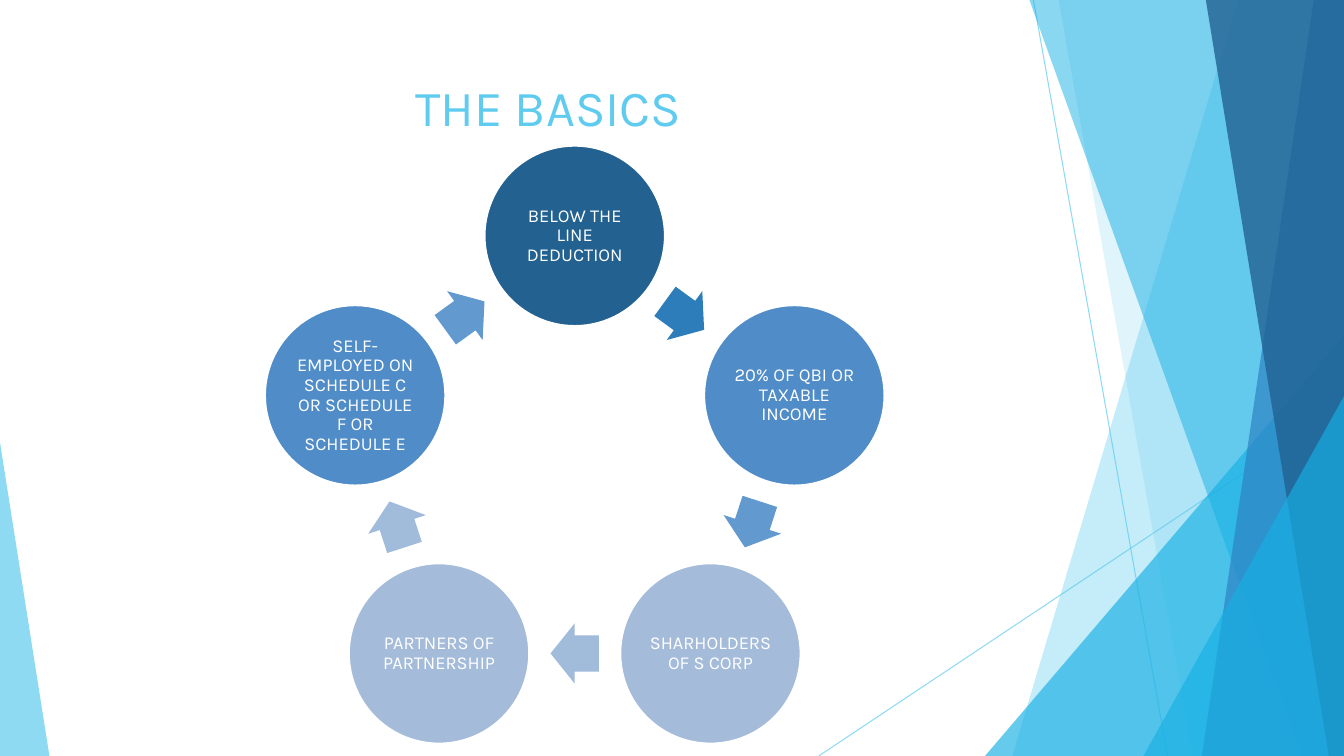
from dataclasses import dataclass
from math import cos, pi, radians, sin

from lxml.etree import SubElement
from pptx import Presentation
from pptx.dml.color import RGBColor
from pptx.enum.shapes import MSO_CONNECTOR, MSO_SHAPE
from pptx.enum.text import MSO_ANCHOR, MSO_AUTO_SIZE, PP_ALIGN
from pptx.oxml.ns import qn
from pptx.util import Inches, Pt

FONT = "Karla"
WIDTH, HEIGHT = 13.33, 7.5

WHITE = RGBColor(0xFF, 0xFF, 0xFF)
SKY = RGBColor(0x5F, 0xCB, 0xEF)
CYAN = RGBColor(0x17, 0xB0, 0xE4)
BLUE = RGBColor(0x2E, 0x83, 0xC3)
NAVY = RGBColor(0x22, 0x62, 0x92)

RING_X, RING_Y, RING_RADIUS = 5.7, 4.63, 2.29
CIRCLE = 1.79
ARROW_W, ARROW_H = 0.48, 0.6


@dataclass
class Ray:
    start: tuple[float, float]
    end: tuple[float, float]


@dataclass
class Panel:
    """Full-height band from a slanted left edge to the right slide edge."""
    top_x: float
    bottom_x: float
    color: RGBColor
    opacity: int


@dataclass
class Wedge:
    """Right-angled triangle standing on the bottom slide edge."""
    left: float
    top: float
    width: float
    apex: float
    color: RGBColor
    opacity: int


@dataclass
class Step:
    text: str
    color: RGBColor
    arrow_color: RGBColor


RAYS = [
    Ray((10.25, 0), (11.58, HEIGHT)),
    Ray((WIDTH, 4.03), (8.12, HEIGHT)),
]

FACETS = [
    Panel(12.28, 10.04, SKY, 36),
    Panel(10.5, 11.83, SKY, 20),
    Wedge(9.77, 3.33, 3.56, 1, CYAN, 66),
    Panel(10.21, 12.91, CYAN, 50),
    Panel(13.03, 11.92, BLUE, 70),
    Panel(11.96, 13.18, NAVY, 80),
    Wedge(11.34, 3.93, 1.99, 1, CYAN, 66),
    Wedge(0, 4.39, 0.49, 0, SKY, 70),
]

DARK = RGBColor(0x22, 0x61, 0x90)
MID = RGBColor(0x50, 0x8D, 0xC8)
PALE = RGBColor(0xA4, 0xBC, 0xDA)
DARK_ARROW = RGBColor(0x2C, 0x7D, 0xBA)
MID_ARROW = RGBColor(0x62, 0x9A, 0xCF)
PALE_ARROW = RGBColor(0xA1, 0xBB, 0xDB)

STEPS = [
    Step("BELOW THE LINE DEDUCTION", DARK, DARK_ARROW),
    Step("20% OF QBI OR TAXABLE INCOME", MID, MID_ARROW),
    Step("SHARHOLDERS OF S CORP", PALE, PALE_ARROW),
    Step("PARTNERS OF PARTNERSHIP", PALE, PALE_ARROW),
    Step("SELF-EMPLOYED ON SCHEDULE C OR SCHEDULE F OR SCHEDULE E", MID, MID_ARROW),
]


def set_opacity(sp, percent: int) -> None:
    color = next(sp._element.spPr.iter(qn("a:srgbClr")))
    SubElement(color, qn("a:alpha"), val=str(percent * 1000))


def fill_shape(sp, color: RGBColor) -> None:
    sp.shadow.inherit = False
    sp.fill.solid()
    sp.fill.fore_color.rgb = color
    sp.line.fill.background()


def format_text(tf, size: float, color: RGBColor) -> None:
    tf.word_wrap = True
    tf.auto_size = MSO_AUTO_SIZE.NONE
    tf.vertical_anchor = MSO_ANCHOR.MIDDLE
    p = tf.paragraphs[0]
    p.alignment = PP_ALIGN.CENTER
    font = p.runs[0].font
    font.name, font.size, font.color.rgb = FONT, Pt(size), color


def add_ray(s, ray: Ray) -> None:
    line = s.shapes.add_connector(
        MSO_CONNECTOR.STRAIGHT, *map(Inches, ray.start + ray.end))
    line.line.color.rgb = SKY
    line.line.width = Pt(0.75)
    set_opacity(line, 70)
    SubElement(line._element.spPr, qn("a:effectLst"))


def add_facet(s, facet: Panel | Wedge) -> None:
    if isinstance(facet, Panel):
        outline = s.shapes.build_freeform(Inches(facet.top_x), 0)
        corners = [(WIDTH, 0), (WIDTH, HEIGHT), (facet.bottom_x, HEIGHT)]
        outline.add_line_segments([(Inches(x), Inches(y)) for x, y in corners])
        sp = outline.convert_to_shape()
    else:
        sp = s.shapes.add_shape(
            MSO_SHAPE.ISOSCELES_TRIANGLE, Inches(facet.left), Inches(facet.top),
            Inches(facet.width), Inches(HEIGHT - facet.top))
        sp.adjustments[0] = facet.apex
    fill_shape(sp, facet.color)
    set_opacity(sp, facet.opacity)


def add_on_ring(s, kind: MSO_SHAPE, angle: float, radius: float,
                width: float, height: float, color: RGBColor):
    """Centre a shape on the ring, with the angle clockwise from the top."""
    x = RING_X + radius * sin(radians(angle))
    y = RING_Y - radius * cos(radians(angle))
    sp = s.shapes.add_shape(kind, Inches(x - width / 2), Inches(y - height / 2),
                            Inches(width), Inches(height))
    fill_shape(sp, color)
    return sp


def add_cycle(s, steps: list[Step]) -> None:
    turn = 360 / len(steps)
    arrow_radius = RING_RADIUS * cos(pi / len(steps))
    for i, step in enumerate(steps):
        circle = add_on_ring(s, MSO_SHAPE.OVAL, i * turn, RING_RADIUS,
                             CIRCLE, CIRCLE, step.color)
        circle.line.color.rgb = WHITE
        circle.line.width = Pt(1.5)
        tf = circle.text_frame
        tf.text = step.text
        tf.margin_left = tf.margin_right = Inches(0.02)
        tf.margin_top = tf.margin_bottom = Inches(0.02)
        format_text(tf, 13, WHITE)
        tf.paragraphs[0].line_spacing = 0.9

        angle = (i + 0.5) * turn
        arrow = add_on_ring(s, MSO_SHAPE.RIGHT_ARROW, angle, arrow_radius,
                            ARROW_W, ARROW_H, step.arrow_color)
        arrow.rotation = angle
        arrow.adjustments[0] = 0.6
        arrow.adjustments[1] = 0.5


def main() -> None:
    prs = Presentation()
    prs.slide_width, prs.slide_height = Inches(WIDTH), Inches(HEIGHT)
    s = prs.slides.add_slide(prs.slide_layouts[5])

    for ray in RAYS:
        add_ray(s, ray)
    for facet in FACETS:
        add_facet(s, facet)

    title = s.shapes.title
    title.left, title.top = Inches(0.74), Inches(0.67)
    title.width, title.height = Inches(9.4), Inches(0.77)
    title.text_frame.text = "THE BASICS"
    format_text(title.text_frame, 36, SKY)

    add_cycle(s, STEPS)
    prs.save("out.pptx")


if __name__ == "__main__":
    main()
